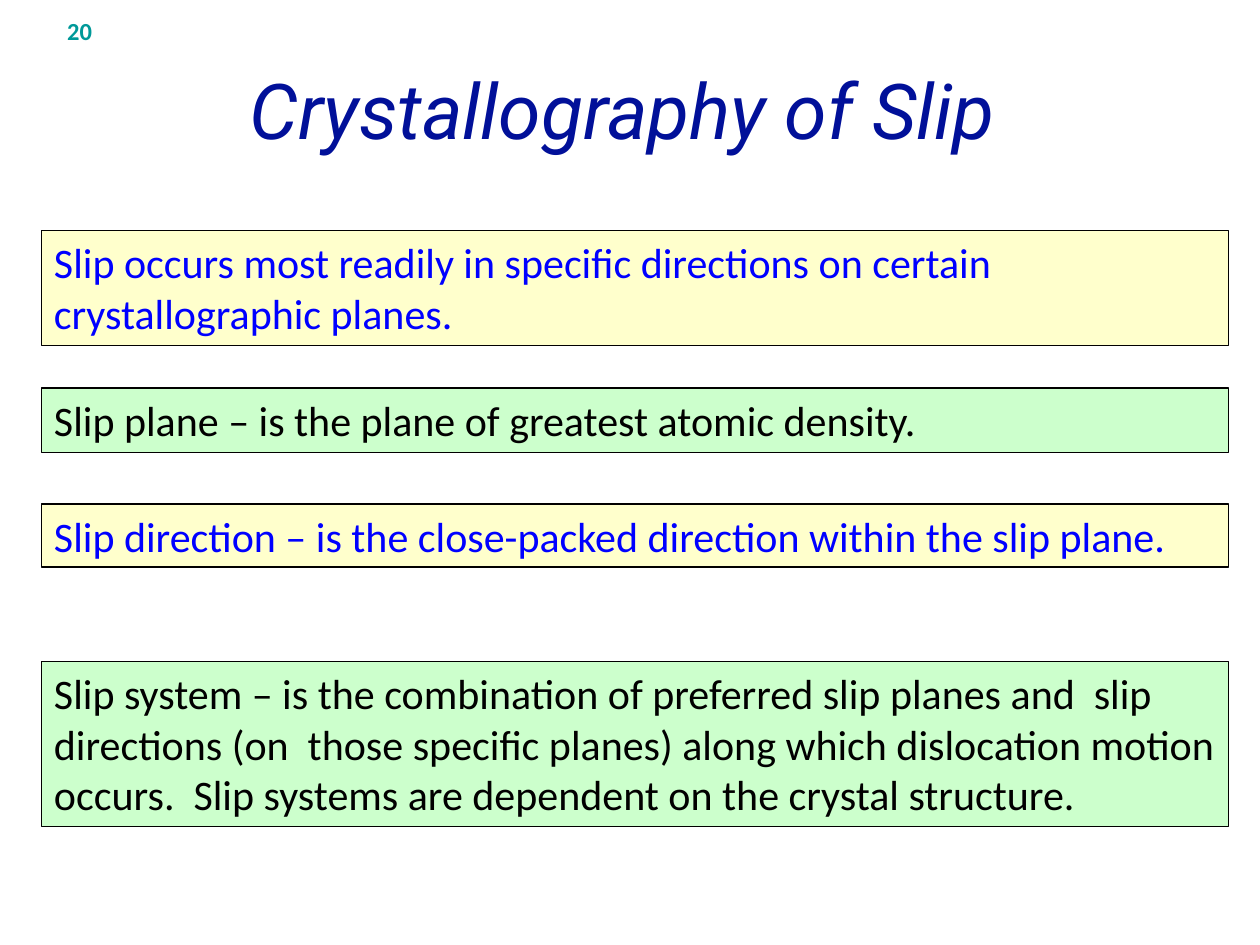
from pptx import Presentation
from pptx.dml.color import RGBColor
from pptx.enum.shapes import MSO_SHAPE
from pptx.enum.text import MSO_ANCHOR, MSO_AUTO_SIZE, PP_ALIGN
from pptx.util import Inches, Pt

NAVY = RGBColor(0x01, 0x10, 0x99)
TEAL = RGBColor(0x00, 0x99, 0x99)
BLUE = RGBColor(0x00, 0x00, 0xFF)
BLACK = RGBColor(0x01, 0x00, 0x00)
CREAM = RGBColor(0xFF, 0xFF, 0xCC)
GREEN = RGBColor(0xCC, 0xFF, 0xCC)

FACTS = [
    (1.83, 0.91, "Slip occurs most readily in specific directions on certain "
     "crystallographic planes."),
    (3.08, 0.51, "Slip plane – is the plane of greatest atomic density."),
    (4, 0.5, "Slip direction – is the close-packed direction within the slip plane."),
    (5.25, 1.31, "Slip system – is the combination of preferred slip planes and  slip "
     "directions (on  those specific planes) along which dislocation motion occurs.  "
     "Slip systems are dependent on the crystal structure."),
]


def write(shape, text, size=24, font="Calibri", color=BLACK, bold=False,
          italic=False, align=PP_ALIGN.LEFT, anchor=MSO_ANCHOR.TOP):
    """Put formatted text in a shape."""
    frame = shape.text_frame
    frame.word_wrap = True
    frame.auto_size = MSO_AUTO_SIZE.NONE
    frame.vertical_anchor = anchor
    par = frame.paragraphs[0]
    par.alignment = align
    run = par.add_run()
    run.text = text
    face = run.font
    face.name, face.size = font, Pt(size)
    face.bold, face.italic = bold, italic
    face.color.rgb = color


class Deck:
    """Hold the style and the current slide."""

    def __init__(self):
        self.show = Presentation()
        self.show.slide_width = Inches(10)
        self.show.slide_height = Inches(7.5)
        self.slide = self.show.slides.add_slide(self.show.slide_layouts[5])
        self.edge = Pt(0.75)

    def title(self, text, left, top, width, height):
        """Place and fill the title."""
        head = self.slide.shapes.title
        head.left, head.top = Inches(left), Inches(top)
        head.width, head.height = Inches(width), Inches(height)
        write(head, text, size=44, font="Roboto", color=NAVY, italic=True)

    def label(self, text, left, top, width, height, **style):
        """Add plain text."""
        box = self.slide.shapes.add_textbox(
            Inches(left), Inches(top), Inches(width), Inches(height))
        write(box, text, **style)

    def panel(self, text, left, top, width, height, fill, color):
        """Add a filled box with a thin edge."""
        box = self.slide.shapes.add_shape(
            MSO_SHAPE.RECTANGLE, Inches(left), Inches(top),
            Inches(width), Inches(height))
        box.shadow.inherit = False
        box.fill.solid()
        box.fill.fore_color.rgb = fill
        box.line.color.rgb = BLACK
        box.line.width = self.edge
        write(box, text, color=color)


def main():
    """Build and save the slide."""
    deck = Deck()
    deck.label("20", 0.03, 0.08, 0.8, 0.42, size=14, color=TEAL,
               bold=True, align=PP_ALIGN.RIGHT)
    deck.title("Crystallography of Slip", 1.88, 0.45, 6.31, 0.83)
    for i, (top, height, text) in enumerate(FACTS):
        fill, color = ((CREAM, BLUE), (GREEN, BLACK))[i % 2]
        deck.panel(text, 0.33, top, 9.42, height, fill, color)
    deck.show.save("out.pptx")


if __name__ == "__main__":
    main()
